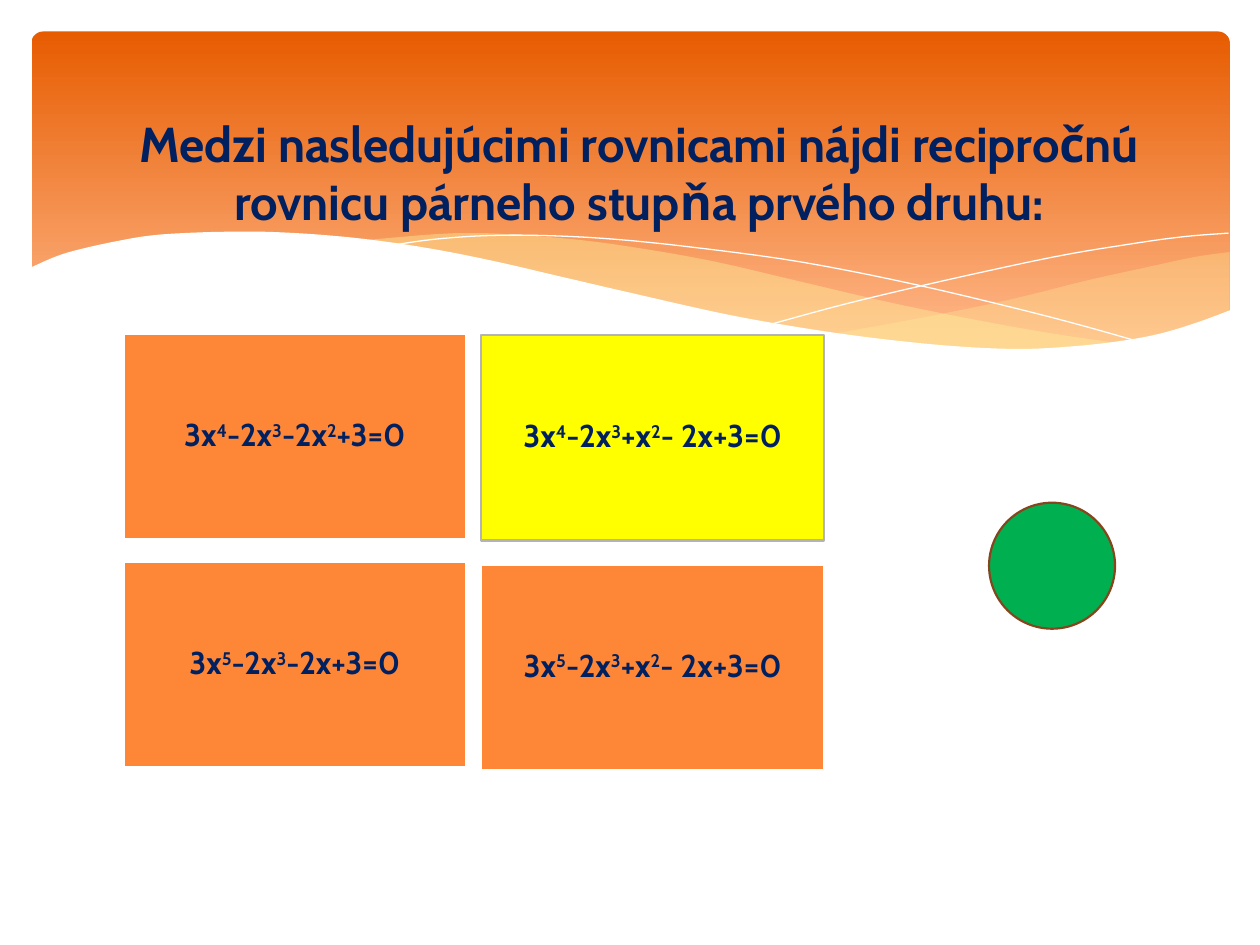
from dataclasses import dataclass

from lxml.etree import SubElement
from pptx import Presentation
from pptx.dml.color import RGBColor as Rgb
from pptx.enum.shapes import MSO_SHAPE as Shape
from pptx.enum.text import MSO_ANCHOR as Anchor, MSO_AUTO_SIZE as AutoSize, PP_ALIGN as Align
from pptx.oxml.ns import qn
from pptx.util import Inches, Pt


@dataclass(frozen=True)
class Theme:
    font: str = "Cabin"
    title_size: float = 28
    tile_size: float = 18
    outline: float = 1.25
    ink: Rgb = Rgb.from_string("002060")
    white: Rgb = Rgb.from_string("FFFFFF")
    band_top: Rgb = Rgb.from_string("E75C01")
    band_bottom: Rgb = Rgb.from_string("FEB687")
    wave: Rgb = Rgb.from_string("FFF39D")
    tile: Rgb = Rgb.from_string("FE8637")
    answer: Rgb = Rgb.from_string("FFFF00")
    answer_line: Rgb = Rgb.from_string("B4B4B4")
    button: Rgb = Rgb.from_string("00B050")
    button_line: Rgb = Rgb.from_string("85461D")


theme = Theme()


def add_curve(page, edges, steps=5):
    """Join edges, each smoothed through its points; several edges enclose an area."""
    outline = []
    for edge in edges:
        ends = [edge[0], *edge, edge[-1]]
        outline.append(edge[0])
        for a, b, c, d in zip(ends, ends[1:], ends[2:], ends[3:]):
            for step in range(1, steps + 1):
                t = step / steps
                outline.append(tuple(
                    (2 * q + (r - p) * t + (2 * p - 5 * q + 4 * r - s) * t**2
                     + (3 * q - p - 3 * r + s) * t**3) / 2
                    for p, q, r, s in zip(a, b, c, d)))
    corners = [(Inches(x), Inches(y)) for x, y in outline]
    builder = page.shapes.build_freeform(*corners[0])
    builder.add_line_segments(corners[1:], close=len(edges) > 1)
    curve = builder.convert_to_shape()
    curve.shadow.inherit = False
    return curve


def write(box, text, size, spacing):
    """Write centred text; parts between ^ marks are raised."""
    frame = box.text_frame
    frame_format = {"word_wrap": True, "auto_size": AutoSize.NONE,
                    "vertical_anchor": Anchor.MIDDLE}
    for name, value in frame_format.items():
        setattr(frame, name, value)
    para = frame.paragraphs[0]
    para.alignment, para.line_spacing = Align.CENTER, spacing
    for index, part in enumerate(text.split("^")):
        span = para.add_run()
        span.text = part
        for name, value in {"name": theme.font, "size": Pt(size), "bold": True}.items():
            setattr(span.font, name, value)
        span.font.color.rgb = theme.ink
        if index % 2:
            span.font._element.set("baseline", "30000")


deck = Presentation()
deck.slide_width, deck.slide_height = Inches(10), Inches(7.5)
page = deck.slides.add_slide(deck.slide_layouts.get_by_name("Title Only"))

# Orange header band
band = page.shapes.add_shape(Shape.ROUNDED_RECTANGLE, Inches(0.25), Inches(0.25),
                             Inches(9.51), Inches(2.7))
band.adjustments[0] = 0.034
band.shadow.inherit = False
band.line.fill.background()
band.fill.gradient()
band.fill.gradient_angle = 270
stops = [(0, theme.band_top), (0.9, theme.band_bottom)]
for stop, (position, color) in zip(band.fill.gradient_stops, stops):
    stop.position, stop.color.rgb = position, color

# Translucent waves
right_wave = [
    [(9.76, 2), (9.48, 2.04), (9.06, 2.13), (8.61, 2.23), (8.05, 2.37), (7.53, 2.48),
     (7.06, 2.57), (6.61, 2.65)],
    [(6.61, 2.65), (7.05, 2.71), (7.45, 2.75), (7.81, 2.77), (8.14, 2.78), (8.54, 2.76),
     (8.89, 2.72), (9.21, 2.65), (9.49, 2.57), (9.76, 2.47)],
]
middle_wave = [
    [(8.93, 2.73), (8.37, 2.65), (7.75, 2.54), (7.06, 2.4), (6.29, 2.22), (5.69, 2.08),
     (5.14, 1.98), (4.65, 1.91), (4.2, 1.87), (3.8, 1.85), (3.44, 1.86), (2.86, 1.91)],
    [(2.86, 1.91), (3.42, 1.99), (4.04, 2.11), (4.49, 2.22), (5.3, 2.4), (6.01, 2.55),
     (6.65, 2.66), (7.22, 2.74), (7.73, 2.77), (8.18, 2.78), (8.57, 2.77), (8.93, 2.73)],
]
for edges, opacity in [(right_wave, 29), (middle_wave, 40)]:
    wave = add_curve(page, edges)
    wave.line.fill.background()
    wave.fill.solid()
    wave.fill.fore_color.rgb = theme.wave
    color = wave.element.spPr.find(qn("a:solidFill"))[0]
    SubElement(color, qn("a:alpha"), val=str(opacity * 1000))

# White hairlines
falling_line = [(3.09, 1.95), (3.44, 1.9), (3.87, 1.87), (4.33, 1.87), (4.89, 1.9),
                (5.56, 1.97), (6.36, 2.08), (7.27, 2.26), (8.31, 2.51), (9.07, 2.72)]
rising_line = [(6.13, 2.57), (6.72, 2.41), (7.48, 2.23), (8.36, 2.04), (8.95, 1.94),
               (9.38, 1.88), (9.75, 1.85)]
for points in (falling_line, rising_line):
    hairline = add_curve(page, [points])
    hairline.fill.background()
    hairline.line.color.rgb = theme.white
    hairline.line.width = Pt(0)

# White wave that cuts off the band
wave_top = [(9.77, 2.46), (9.5, 2.56), (9.2, 2.65), (8.87, 2.71), (8.5, 2.75), (8.09, 2.77),
            (7.61, 2.75), (7.08, 2.7), (6.48, 2.62), (5.79, 2.5), (5.03, 2.33), (4.47, 2.2),
            (3.91, 2.07), (3.4, 1.97), (2.92, 1.9), (2.5, 1.86), (2.11, 1.84), (1.77, 1.84),
            (1.46, 1.85), (1.19, 1.87), (0.95, 1.91), (0.67, 1.97), (0.46, 2.03), (0.23, 2.13)]
cutoff = add_curve(page, [wave_top, [(0.23, 3.29), (9.77, 3.29)]])
cutoff.line.fill.background()
cutoff.fill.solid()
cutoff.fill.fore_color.rgb = theme.white

# Title, brought in front of the header
title = page.shapes.title
title.element.getparent().append(title.element)
place = {"left": 0.57, "top": 0.68, "width": 9, "height": 1.37}
for name, value in place.items():
    setattr(title, name, Inches(value))
write(title, "Medzi nasledujúcimi rovnicami nájdi recipročnú rovnicu párneho stupňa prvého druhu:",
      theme.title_size, 1)

# Equation tiles, the answer marked, and the round button
tile_width, tile_height = 2.72, 1.63
left, right = 0.98, 3.82
plain = (theme.tile, theme.white)
marked = (theme.answer, theme.answer_line)
tiles = [
    (left, 2.65, plain, "3x^4^-2x^3^-2x^2^+3=0"),
    (right, 2.66, marked, "3x^4^-2x^3^+x^2^- 2x+3=0"),
    (left, 4.46, plain, "3x^5^-2x^3^-2x+3=0"),
    (right, 4.48, plain, "3x^5^-2x^3^+x^2^- 2x+3=0"),
]
figures = [(Shape.RECTANGLE, x, y, tile_width, tile_height, colors, equation)
           for x, y, colors, equation in tiles]
figures.append((Shape.OVAL, 7.85, 3.99, 1, 1, (theme.button, theme.button_line), None))
for kind, x, y, width, height, (fill, line), equation in figures:
    box = page.shapes.add_shape(kind, Inches(x), Inches(y), Inches(width), Inches(height))
    box.shadow.inherit = False
    box.fill.solid()
    box.fill.fore_color.rgb = fill
    box.line.color.rgb = line
    box.line.width = Pt(theme.outline)
    if equation:
        for side in ("left", "top", "right", "bottom"):
            setattr(box.text_frame, f"margin_{side}", Inches(0.07))
        write(box, equation, theme.tile_size, 0.9)

deck.save("out.pptx")
